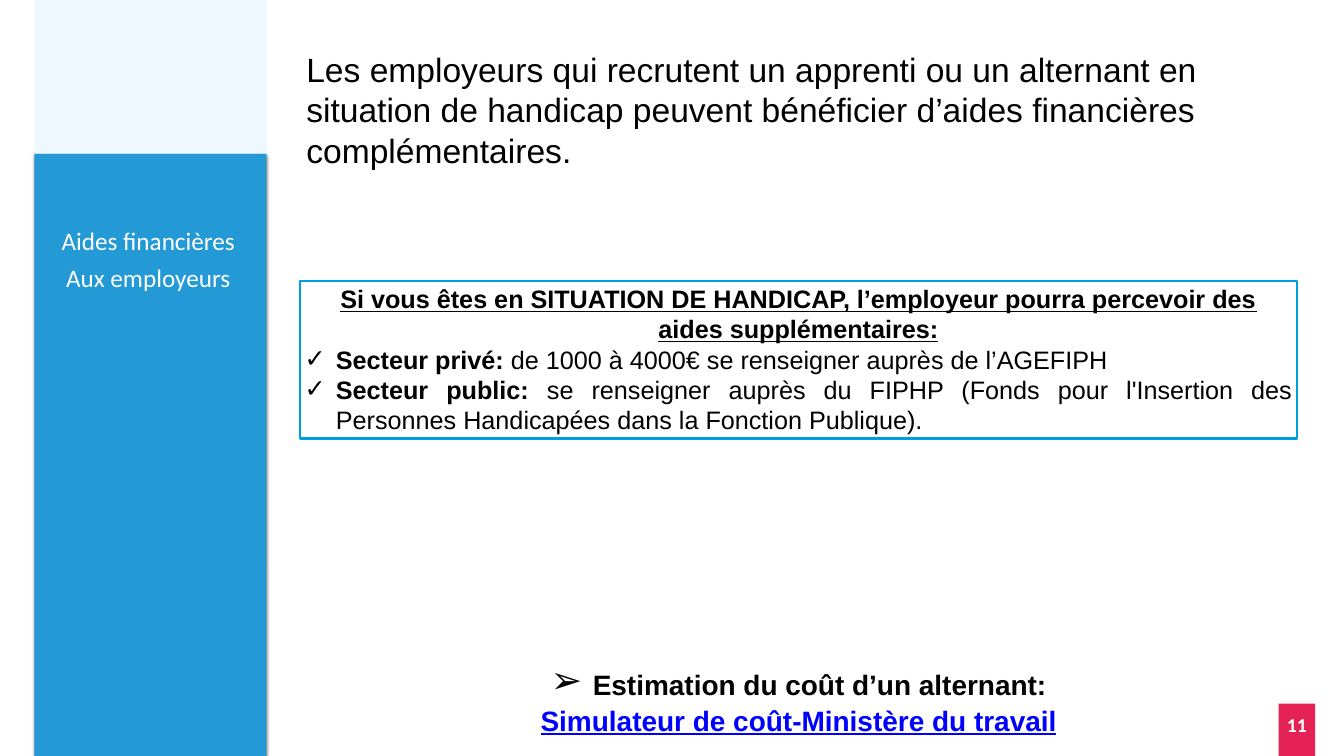
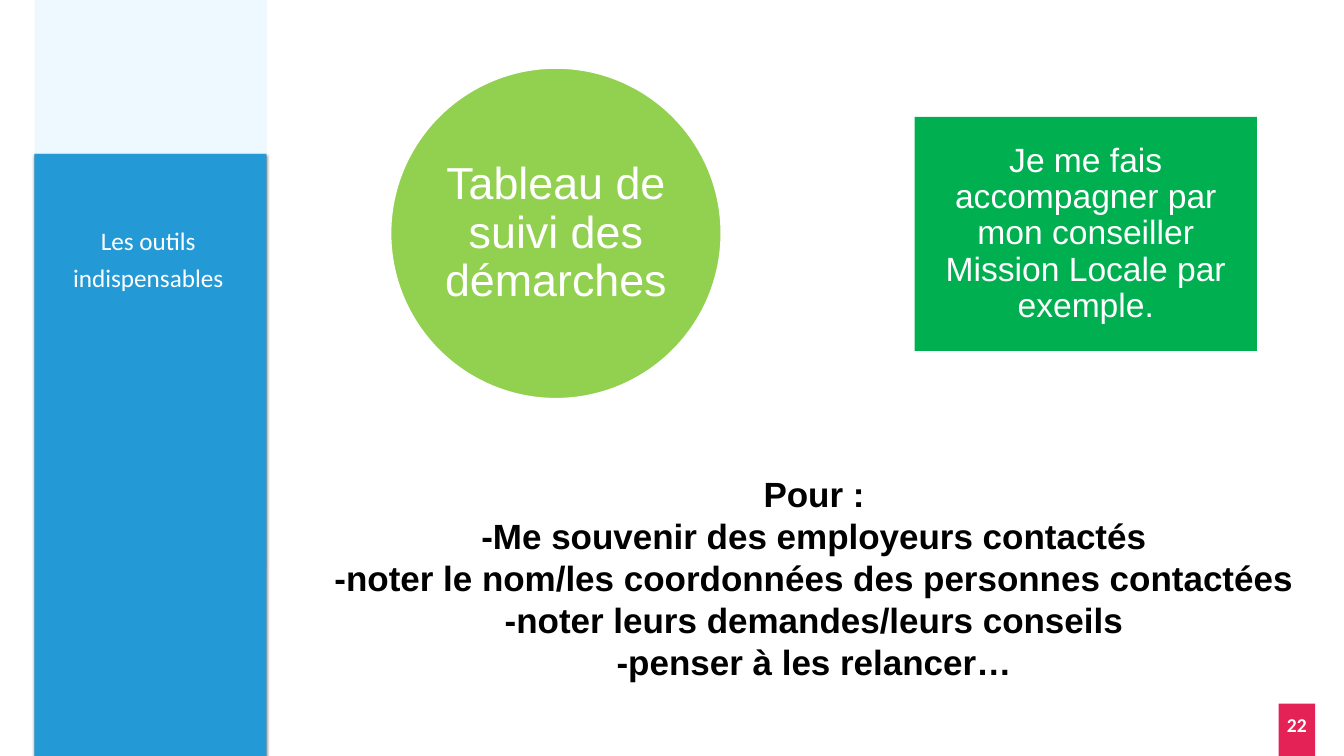
from dataclasses import dataclass

from lxml.etree import SubElement
from pptx import Presentation
from pptx.dml.color import RGBColor
from pptx.enum.shapes import MSO_SHAPE as Preset
from pptx.enum.text import MSO_ANCHOR as Anchor, MSO_AUTO_SIZE as AutoSize, PP_ALIGN as Align
from pptx.oxml.ns import qn
from pptx.util import Cm, Pt


@dataclass(frozen=True)
class Theme:
    body_font: str = "Arial"
    side_font: str = "Calibri"
    pale: str = "EDF8FF"
    blue: str = "2399D6"
    red: str = "E52255"
    outline: str = "009EE0"
    link: str = "0000FF"
    green: str = "00B050"
    lime: str = "92D050"
    black: str = "000000"
    white: str = "FFFFFF"
    number_size: int = 28
    small_size: int = 36
    medium_size: int = 40
    intro_size: int = 48
    list_size: int = 50
    bullet_size: int = 54
    circle_size: int = 64


THEME = Theme()
DEFAULT_INSETS = (0.25, 0.13)
EVEN_INSETS = (0.2, 0.2)
SHAPE_INSETS = (0.23, 0.23)
TITLE_ONLY = 5


def place(shape, area):
    shape.left, shape.top, shape.width, shape.height = map(Cm, area)


def add_block(page, area, fill=None, line=None, line_width=0, preset=Preset.RECTANGLE):
    shape = page.shapes.add_shape(preset, *map(Cm, area))
    shape.shadow.inherit = False
    if fill:
        shape.fill.solid()
        shape.fill.fore_color.rgb = RGBColor.from_string(fill)
    else:
        shape.fill.background()
    if line:
        shape.line.color.rgb = RGBColor.from_string(line)
        shape.line.width = Pt(line_width)
    else:
        shape.line.fill.background()
    return shape


def add_shadow(shape):
    effects = shape.element.spPr.find(qn("a:effectLst"))
    outer = SubElement(effects, qn("a:outerShdw"), blurRad=str(Pt(4)), dist=str(Pt(2)),
                       dir="5400000", rotWithShape="0")
    color = SubElement(outer, qn("a:srgbClr"), val=THEME.black)
    SubElement(color, qn("a:alpha"), val="50000")


def style_span(span, size, color=THEME.black, bold=False, underline=False, font=THEME.body_font):
    span.font.name = font
    span.font.size = Pt(size)
    span.font.bold = bold
    span.font.underline = underline
    span.font.color.rgb = RGBColor.from_string(color)


def write(box, lines, size, align=Align.CENTER, anchor=Anchor.TOP, insets=DEFAULT_INSETS,
          spacing=None, **style):
    frame = box.text_frame
    frame.word_wrap = True
    frame.auto_size = AutoSize.NONE
    frame.vertical_anchor = anchor
    frame.margin_left = frame.margin_right = Cm(insets[0])
    frame.margin_top = frame.margin_bottom = Cm(insets[1])
    frame.text = "\n".join(lines)
    for para in frame.paragraphs:
        para.alignment = align
        if spacing:
            para.line_spacing = spacing
        for span in para.runs:
            style_span(span, size, **style)
    return frame.paragraphs


def add_text(page, area, lines, size, **options):
    return write(page.shapes.add_textbox(*map(Cm, area)), lines, size, **options)


def append_span(para, text, size, **style):
    span = para.add_run()
    span.text = text
    style_span(span, size, **style)


def set_bullet(para, symbol, indent):
    properties = para._p.get_or_add_pPr()
    properties.set("marL", str(Cm(indent)))
    properties.set("indent", str(-Cm(indent)))
    SubElement(properties, qn("a:buFont"), typeface=THEME.body_font)
    SubElement(properties, qn("a:buChar"), char=symbol)


def add_page(deck, title_lines, number):
    page = deck.slides.add_slide(deck.slide_layouts[TITLE_ONLY])
    add_block(page, (1.75, 0, 11.7, 28.63), THEME.pale)
    add_shadow(add_block(page, (1.73, 7.75, 11.7, 30.35), THEME.blue))

    title = page.shapes.title
    place(title, (2.24, 10.92, 10.46, 3.96))
    write(title, title_lines, THEME.small_size, anchor=Anchor.MIDDLE, insets=EVEN_INSETS,
          spacing=1.2, color=THEME.white, font=THEME.side_font)
    title.element.getparent().append(title.element)

    add_block(page, (64.44, 35.46, 1.85, 2.64), THEME.red)
    add_text(page, (64.44, 35.81, 1.85, 1.96), [number], THEME.number_size,
             color=THEME.white, bold=True, font=THEME.side_font)
    return page


def add_cost_estimate(page):
    heading, link = add_text(
        page, (23.32, 33.02, 33.86, 4.27), [" ", "Simulateur de coût-Ministère du travail"],
        THEME.medium_size, bold=True)
    style_span(heading.runs[0], THEME.bullet_size, bold=True)
    append_span(heading, "Estimation du coût d’un alternant:", THEME.medium_size, bold=True)
    set_bullet(heading, "➢", 0.97)
    style_span(link.runs[0], THEME.medium_size, THEME.link, bold=True, underline=True)


def add_disability_frame(page):
    sectors = {
        "Secteur privé: ": "de 1000 à 4000€ se renseigner auprès de l’AGEFIPH",
        "Secteur public: ": "se renseigner auprès du FIPHP (Fonds pour l'Insertion des "
                            "Personnes Handicapées dans la Fonction Publique).",
    }
    heading = ("Si vous êtes en SITUATION DE HANDICAP, l’employeur pourra percevoir "
               "des aides supplémentaires:")
    frame = add_block(page, (15.11, 14.15, 50.27, 7.95), line=THEME.outline, line_width=3)
    paras = write(frame, [heading, *sectors], THEME.small_size, bold=True)
    paras[0].runs[0].font.underline = True
    for para, detail in zip(paras[1:], sectors.values()):
        para.alignment = Align.JUSTIFY
        append_span(para, detail, THEME.small_size)
        set_bullet(para, "✓", 1.57)


def build_aid_page(deck):
    page = add_page(deck, ["Aides financières", "Aux employeurs"], "11")
    add_cost_estimate(page)
    add_text(page, (15.19, 2.34, 49.61, 6.4),
             ["Les employeurs qui recrutent un apprenti ou un alternant en situation de handicap "
              "peuvent bénéficier d’aides financières complémentaires."],
             THEME.intro_size, align=Align.LEFT)
    add_disability_frame(page)


def build_tools_page(deck):
    page = add_page(deck, ["Les outils indispensables"], "22")
    add_text(page, (14.86, 23.57, 52.35, 11.1),
             ["Pour :",
              "-Me souvenir des employeurs contactés",
              "-noter le nom/les coordonnées des personnes contactées",
              "-noter leurs demandes/leurs conseils",
              "-penser à les relancer…"],
             THEME.list_size, anchor=Anchor.MIDDLE, insets=EVEN_INSETS, bold=True)

    label_style = dict(anchor=Anchor.MIDDLE, insets=SHAPE_INSETS, spacing=0.9, color=THEME.white)
    advice = add_block(page, (46.1, 5.89, 17.25, 11.79), THEME.green)
    write(advice, ["Je me fais accompagner par mon conseiller Mission Locale par exemple."],
          THEME.intro_size, **label_style)
    add_block(page, (19.69, 3.43, 16.66, 16.66), THEME.lime, THEME.white, 2, Preset.OVAL)
    add_text(page, (22.12, 5.89, 11.79, 11.79), ["Tableau de suivi des démarches"],
             THEME.circle_size, **label_style)


def main():
    deck = Presentation()
    deck.slide_width, deck.slide_height = Cm(67.74), Cm(38.1)
    build_aid_page(deck)
    build_tools_page(deck)
    deck.save("out.pptx")


if __name__ == "__main__":
    main()
